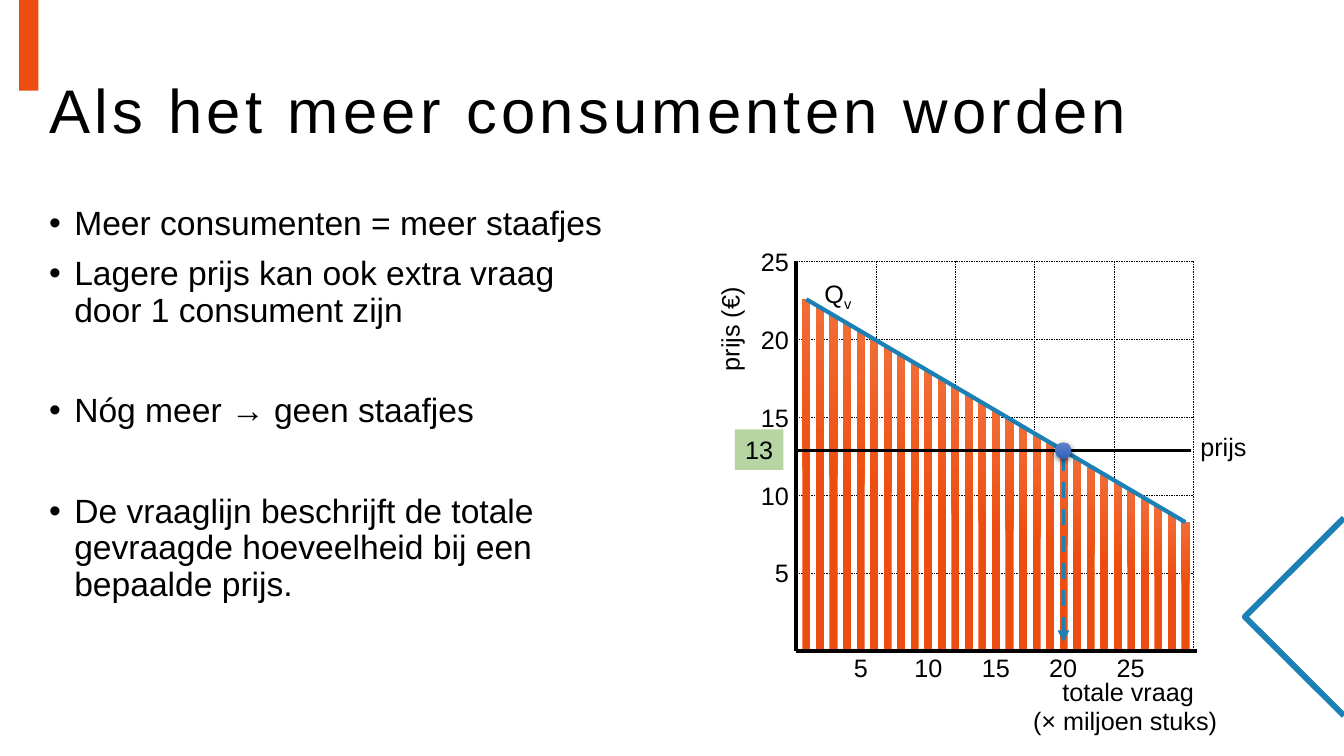
from dataclasses import dataclass

from lxml.etree import SubElement
from pptx import Presentation
from pptx.dml.color import RGBColor as RGB
from pptx.enum.dml import MSO_LINE as DASH
from pptx.enum.shapes import MSO_CONNECTOR as CONN, MSO_SHAPE as SHAPE
from pptx.enum.text import MSO_ANCHOR as ANCHOR, MSO_AUTO_SIZE as AUTO
from pptx.oxml.ns import qn
from pptx.util import Pt


@dataclass(frozen=True)
class Theme:
    """Colours, font and type sizes of the slide."""
    font: str = "Arial"
    black: RGB = RGB.from_string("000000")
    orange: RGB = RGB.from_string("ED4D0F")
    light_orange: RGB = RGB.from_string("F26C36")
    blue: RGB = RGB.from_string("1A80B6")
    green: RGB = RGB.from_string("70AD47")
    dot_top: RGB = RGB.from_string("6183CB")
    dot_bottom: RGB = RGB.from_string("3062BB")
    title: float = 44
    body: float = 24
    label: float = 18


THEME = Theme()
AXIS_X, AXIS_Y = 568.8, 465
GRID_TOP, GRID_DX, GRID_DY = 186.5, 56.7, 55.65
PRICE_Y = 321.8
LABEL_H = 29

BULLETS = [
    ("Meer consumenten = meer staafjes", 10),
    ("Lagere prijs kan ook extra vraag door 1 consument zijn", 10),
    ("Nóg meer → geen staafjes", 46),
    ("De vraaglijn beschrijft de totale gevraagde hoeveelheid bij een bepaalde prijs.", 46),
]


def apply(obj, **formats):
    """Set each format value on the object."""
    for name, value in formats.items():
        setattr(obj, name, value)


def add_run(p, text, size):
    """Add a run in the theme font and return it."""
    r = p.add_run()
    apply(r, text=text)
    apply(r.font, name=THEME.font, size=Pt(size))
    r.font.color.rgb = THEME.black
    return r


def add_box(s, x, y, w, h, **formats):
    """Add a text box and return its text frame."""
    tf = s.shapes.add_textbox(Pt(x), Pt(y), Pt(w), Pt(h)).text_frame
    apply(tf, **formats)
    return tf


def add_label(s, text, x, y, w, rotation=0):
    """Add a one-line chart label and return its paragraph."""
    sp = s.shapes.add_textbox(Pt(x), Pt(y), Pt(w), Pt(LABEL_H))
    apply(sp, rotation=rotation)
    apply(sp.text_frame, word_wrap=False, auto_size=AUTO.SHAPE_TO_FIT_TEXT)
    p = sp.text_frame.paragraphs[0]
    add_run(p, text, THEME.label)
    return p


def add_plain(s, kind, x, y, w, h, color=None):
    """Add a preset shape without outline or shadow."""
    sp = s.shapes.add_shape(kind, Pt(x), Pt(y), Pt(w), Pt(h))
    sp.shadow.inherit = False
    sp.line.fill.background()
    if color is not None:
        sp.fill.solid()
        sp.fill.fore_color.rgb = color
    return sp


def fill_gradient(sp, *stops):
    """Fill a shape from top to bottom with two (position, colour) stops."""
    sp.fill.gradient()
    sp.fill.gradient_angle = 270
    for stop, (position, color) in zip(sp.fill.gradient_stops, stops):
        stop.position = position
        stop.color.rgb = color


def add_line(s, x1, y1, x2, y2, width, color=THEME.black, dash=None, arrow=False):
    """Add a straight line, optionally dashed or ending in an arrowhead."""
    line = s.shapes.add_connector(CONN.STRAIGHT, Pt(x1), Pt(y1), Pt(x2), Pt(y2))
    line.line.color.rgb = color
    apply(line.line, width=Pt(width), dash_style=dash)
    if arrow:
        SubElement(line.line._ln, qn("a:tailEnd"), type="triangle")
    SubElement(line._element.spPr, qn("a:effectLst"))


def add_title(s, text):
    """Add the letter-spaced title."""
    tf = add_box(s, 28, 28.8, 906, 104.4, word_wrap=True, vertical_anchor=ANCHOR.MIDDLE)
    p = tf.paragraphs[0]
    p.line_spacing = 0.9
    add_run(p, text, THEME.title)._r.get_or_add_rPr().set("spc", "300")


def add_bullets(s, items):
    """Add the bulleted text column."""
    tf = add_box(s, 28, 144, 416, 367, word_wrap=True)
    for i, (text, before) in enumerate(items):
        p = tf.add_paragraph() if i else tf.paragraphs[0]
        apply(p, line_spacing=0.9, space_before=Pt(before))
        add_run(p, text, THEME.body)
        pPr = p._p.get_or_add_pPr()
        pPr.set("marL", str(Pt(18)))
        pPr.set("indent", str(-Pt(18)))
        SubElement(pPr, qn("a:buFont"), typeface=THEME.font)
        SubElement(pPr, qn("a:buChar"), char="•")


def add_decor(s):
    """Add the orange tab and the blue chevron at the slide edges."""
    add_plain(s, SHAPE.RECTANGLE, 13.7, -18, 13.7, 82.8, THEME.orange)
    builder = s.shapes.build_freeform(Pt(960), Pt(370))
    builder.add_line_segments([(Pt(889.2), Pt(440.6)), (Pt(960), Pt(511.2))], close=False)
    sp = builder.convert_to_shape()
    sp.shadow.inherit = False
    sp.fill.background()
    sp.line.color.rgb = THEME.blue
    sp.line.width = Pt(4.25)


def add_axes(s):
    """Add the grid, axes, tick labels and axis titles."""
    right = AXIS_X + 5 * GRID_DX
    add_line(s, AXIS_X, GRID_TOP, AXIS_X, AXIS_Y, 3)
    for i in range(5):
        y, x = GRID_TOP + i * GRID_DY, AXIS_X + (i + 1) * GRID_DX
        add_line(s, AXIS_X, y, right, y, 0.25, dash=DASH.DASH)
        add_line(s, x, GRID_TOP, x, AXIS_Y, 0.25, dash=DASH.DASH)
        tick = str(5 * (i + 1))
        w = 14.4 + 10 * len(tick)
        add_label(s, tick, 570.8 - w, 394.7 - i * 55.5, w)
        add_label(s, tick, 615 + i * 48.2 - w / 2, 462.4, w)
    add_line(s, right + 2.4, AXIS_Y, AXIS_X, AXIS_Y, 3)
    add_label(s, "totale vraag", 751.7, 479.5, 109.4)
    add_label(s, "(× miljoen stuks)", 730.8, 500.4, 147.6)
    add_label(s, "prijs (€)", 483.8, 220.3, 74.9, rotation=270)


def add_bars(s, count=29):
    """Add the falling row of consumer bars."""
    for i in range(count):
        top = 213.8 + i * 5.68
        bar = add_plain(s, SHAPE.RECTANGLE, 573.1 + i * 9.67, top, 5.8, 463.3 - top)
        bar.rotation = 180
        fill_gradient(bar, (0.49, THEME.orange), (1, THEME.light_orange))


def add_price_tag(s):
    """Add the half-transparent tag with the price."""
    tag = add_plain(s, SHAPE.RECTANGLE, 524.9, 306.7, 34.6, LABEL_H, THEME.green)
    color = tag._element.spPr.find(f"{qn('a:solidFill')}/{qn('a:srgbClr')}")
    SubElement(color, qn("a:alpha"), val="50000")
    tag.text_frame.word_wrap = False
    add_run(tag.text_frame.paragraphs[0], "13", THEME.label)


def add_dot(s, x, y, size):
    """Add the shaded point where price meets demand."""
    dot = add_plain(s, SHAPE.OVAL, x - size / 2, y - size / 2, size, size)
    fill_gradient(dot, (0, THEME.dot_top), (1, THEME.dot_bottom))
    effects = dot._element.spPr.find(qn("a:effectLst"))
    shadow = SubElement(effects, qn("a:outerShdw"), blurRad=str(Pt(4.5)),
                        dist=str(Pt(1.5)), dir="5400000")
    color = SubElement(shadow, qn("a:srgbClr"), val=str(THEME.black))
    SubElement(color, qn("a:alpha"), val="63000")


def add_demand(s):
    """Add the price line, the demand line and the quantity arrow."""
    add_price_tag(s)
    add_label(s, "prijs", 850.3, 304.6, 47.5)
    add_line(s, AXIS_X, PRICE_Y, 851, PRICE_Y, 1.5)
    add_line(s, 576, 213.8, 846.7, 373, 3, THEME.blue)
    q = add_run(add_label(s, "Q", 581.8, 195.1, 34.6), "v", THEME.label)
    q._r.get_or_add_rPr().set("baseline", "-25000")
    add_line(s, 759.6, 325.4, 759.6, 458.6, 2.75, THEME.blue, DASH.DASH, arrow=True)
    add_dot(s, 759.6, PRICE_Y, 11.5)


def main():
    """Build and save the slide."""
    prs = Presentation()
    apply(prs, slide_width=Pt(960), slide_height=Pt(540))
    s = prs.slides.add_slide(prs.slide_layouts[6])
    add_decor(s)
    add_title(s, "Als het meer consumenten worden")
    add_bullets(s, BULLETS)
    add_axes(s)
    add_bars(s)
    add_demand(s)
    prs.save("out.pptx")


if __name__ == "__main__":
    main()
